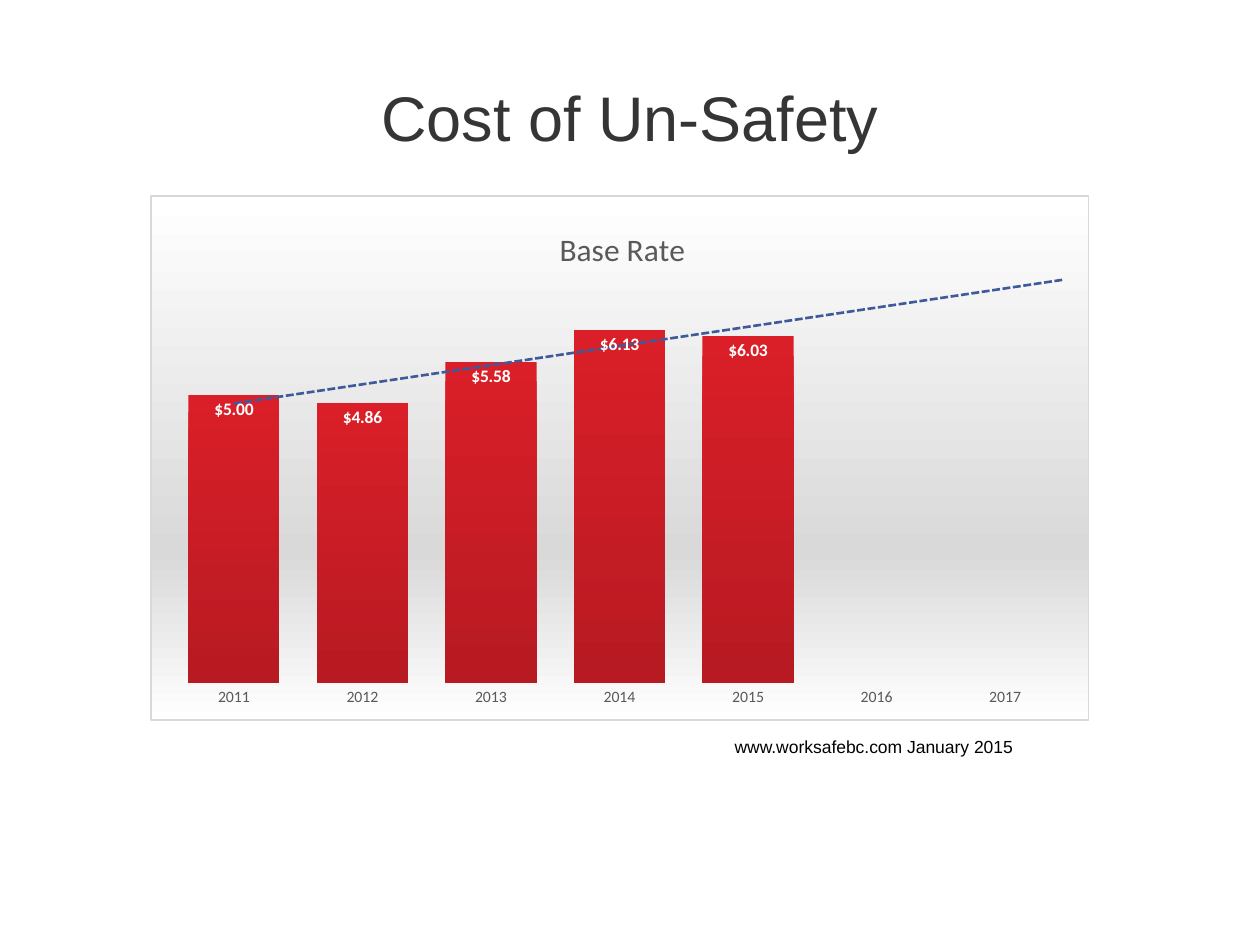
from dataclasses import dataclass

import pptx
import pptx.chart.data
import pptx.dml.color
import pptx.enum.chart
import pptx.enum.text
import pptx.oxml
import pptx.oxml.ns
import pptx.util

Cm = pptx.util.Cm
Pt = pptx.util.Pt
qn = pptx.oxml.ns.qn
NS = pptx.oxml.ns.nsdecls("c", "a")


@dataclass(frozen=True)
class Theme:
    head: str = "353535"
    ink: str = "000000"
    gray: str = "595959"
    edge: str = "D9D9D9"
    pale: str = "FFFFFF"
    red: str = "DA1F28"
    deep: str = "B71A22"
    trend: str = "3F5A9A"
    sans: str = "Arial"
    plot: str = "Calibri"
    big: float = 36
    mid: float = 18
    small: float = 10
    tick: float = 9


@dataclass(frozen=True)
class Box:
    left: float
    top: float
    width: float
    height: float

    def sides(self) -> tuple:
        return tuple(Cm(n) for n in (self.left, self.top, self.width, self.height))


@dataclass(frozen=True)
class Rate:
    year: str
    cost: float | None = None


THEME = Theme()
RATES = [
    Rate("2011", 5),
    Rate("2012", 4.86),
    Rate("2013", 5.58),
    Rate("2014", 6.13),
    Rate("2015", 6.03),
    Rate("2016"),
    Rate("2017"),
]


def style(font, size: float, color: str, face: str, bold: bool = False) -> None:
    font.size = Pt(size)
    font.name = face
    font.bold = bold
    font.color.rgb = pptx.dml.color.RGBColor.from_string(color)


def write(frame, text: str, *, size: float, color: str, face: str, align=None) -> None:
    para = frame.paragraphs[0]
    para.alignment = align
    run = para.add_run()
    run.text = text
    style(run.font, size, color, face)


def blend(*stops: tuple[int, str]) -> str:
    marks = "".join(
        f'<a:gs pos="{spot * 1000}"><a:srgbClr val="{color}"/></a:gs>'
        for spot, color in stops
    )
    return f'<a:gradFill><a:gsLst>{marks}</a:gsLst><a:lin ang="5400000" scaled="0"/></a:gradFill>'


def stroke(color: str, width: float, dash: str = "solid") -> str:
    return (
        f'<a:ln w="{Pt(width)}"><a:solidFill><a:srgbClr val="{color}"/></a:solidFill>'
        f'<a:prstDash val="{dash}"/></a:ln>'
    )


def node(tag: str, inner: str):
    return pptx.oxml.parse_xml(f"<c:{tag} {NS}>{inner}</c:{tag}>")


def place(target: str, **spots: float):
    inner = f'<c:layoutTarget val="{target}"/>' if target else ""
    inner += '<c:xMode val="edge"/><c:yMode val="edge"/>'
    inner += "".join(f'<c:{key} val="{spot}"/>' for key, spot in spots.items())
    return node("layout", f"<c:manualLayout>{inner}</c:manualLayout>")


def swap(owner, layout) -> None:
    for old in owner.findall(qn("c:layout")):
        owner.remove(old)
    text = owner.find(qn("c:tx"))
    if text is None:
        owner.insert(0, layout)
    else:
        text.addnext(layout)


def label(series) -> None:
    labels = series.data_labels
    labels.show_value = True
    labels.number_format = '"$"#,##0.00'
    labels.number_format_is_linked = False
    labels.position = pptx.enum.chart.XL_LABEL_POSITION.INSIDE_END
    style(labels.font, THEME.small, THEME.pale, THEME.plot, bold=True)


def paint(series) -> None:
    fill = series.format.fill
    fill.gradient()
    fill.gradient_angle = 270
    for stop, color in zip(fill.gradient_stops, (THEME.red, THEME.deep)):
        stop.color.rgb = pptx.dml.color.RGBColor.from_string(color)
    for stop, spot in zip(fill.gradient_stops, (0, 1)):
        stop.position = spot


def project(series, ahead: float) -> None:
    line = stroke(THEME.trend, 1.5, "sysDash")
    trend = node(
        "trendline",
        f'<c:spPr>{line}</c:spPr><c:trendlineType val="linear"/><c:forward val="{ahead}"/>'
        '<c:dispRSqr val="0"/><c:dispEq val="0"/>',
    )
    series._element.find(qn("c:cat")).addprevious(trend)


def axes(chart) -> None:
    years = chart.category_axis
    years.major_tick_mark = pptx.enum.chart.XL_TICK_MARK.NONE
    years.format.line.fill.background()
    style(years.tick_labels.font, THEME.tick, THEME.gray, THEME.plot)
    costs = chart.value_axis
    costs.minimum_scale, costs.maximum_scale = 0, 7
    costs.has_major_gridlines = False
    costs.visible = False


def graph(slide, box: Box, rates: list[Rate]) -> None:
    data = pptx.chart.data.CategoryChartData(number_format='"$"#,##0.00')
    data.categories = [rate.year for rate in rates]
    data.add_series("Series 1", [rate.cost for rate in rates])
    kind = pptx.enum.chart.XL_CHART_TYPE.COLUMN_CLUSTERED
    chart = slide.shapes.add_chart(kind, *box.sides(), data).chart
    style(chart.font, THEME.small, THEME.ink, THEME.plot)
    chart.has_legend = False
    chart.has_title = True
    title = chart.chart_title
    write(title.text_frame, "Base Rate", size=THEME.mid, color=THEME.gray, face=THEME.plot)
    axes(chart)
    plot = chart.plots[0]
    plot.gap_width = 41
    plot.vary_by_categories = False
    series = plot.series[0]
    paint(series)
    label(series)
    project(series, 2.43)
    root = chart.element.find(qn("c:chart"))
    swap(root.find(qn("c:title")), place("", x=0.43, y=0.05))
    swap(root.find(qn("c:plotArea")), place("inner", x=0.02, y=0.16, w=0.96, h=0.77))
    back = blend((0, THEME.pale), (68, THEME.edge), (100, THEME.pale))
    root.addnext(node("spPr", back + stroke(THEME.edge, 0.75)))


def main() -> None:
    deck = pptx.Presentation()
    deck.slide_width, deck.slide_height = Cm(25.4), Cm(19.05)
    slide = deck.slides.add_slide(deck.slide_layouts[5])
    title = slide.shapes.title
    title.left, title.top, title.width, title.height = Box(1.27, 0.76, 22.86, 3.18).sides()
    title.text_frame.vertical_anchor = pptx.enum.text.MSO_ANCHOR.MIDDLE
    write(title.text_frame, "Cost of Un-Safety", size=THEME.big, color=THEME.head,
          face=THEME.sans, align=pptx.enum.text.PP_ALIGN.CENTER)
    graph(slide, Box(3.03, 3.94, 18.92, 10.59), RATES)
    note = slide.shapes.add_textbox(*Box(14.56, 14.71, 6.3, 0.68).sides()).text_frame
    note.word_wrap = True
    note.auto_size = pptx.enum.text.MSO_AUTO_SIZE.SHAPE_TO_FIT_TEXT
    write(note, "www.worksafebc.com January 2015", size=THEME.small, color=THEME.ink,
          face=THEME.sans)
    deck.save("out.pptx")


if __name__ == "__main__":
    main()
